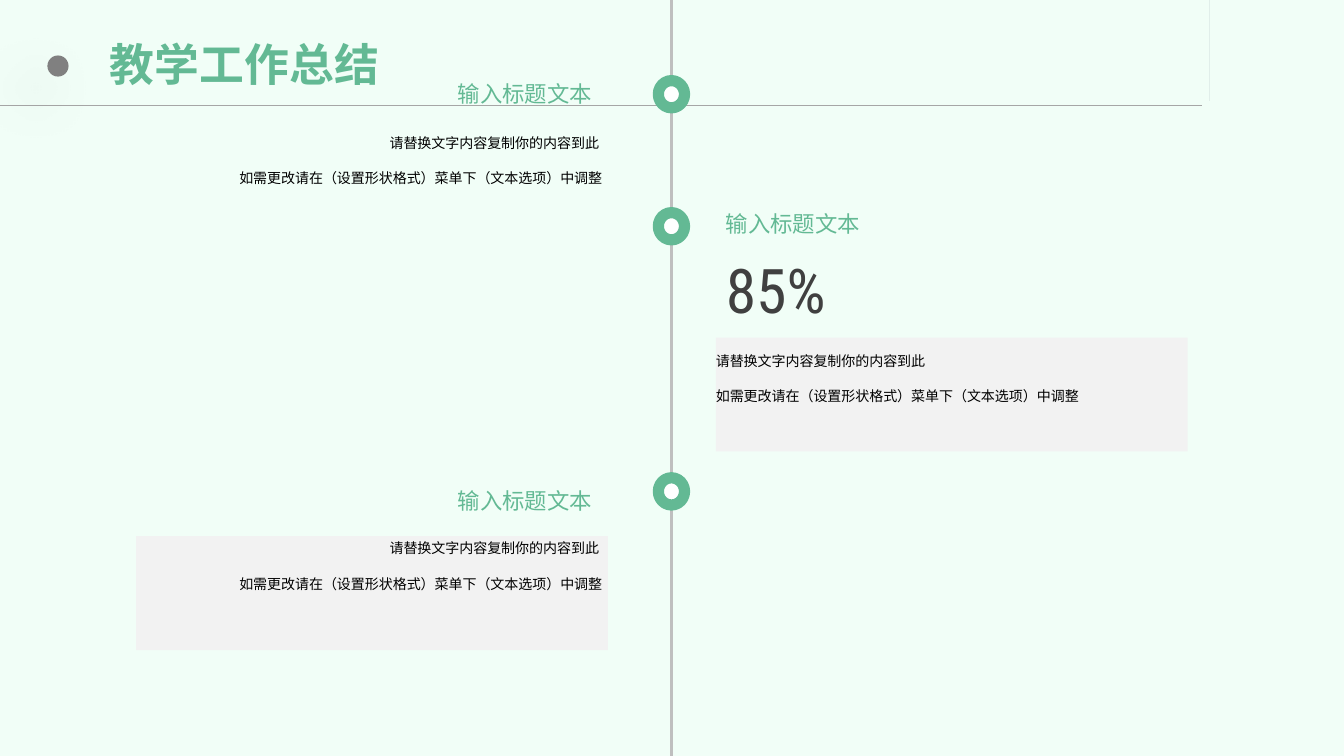
import pptx
import pptx.util
import pptx.dml.color
import pptx.enum.shapes
import pptx.enum.text
import pptx.oxml
import pptx.oxml.ns
from lxml import etree

Inches, Pt = pptx.util.Inches, pptx.util.Pt
ALIGN = pptx.enum.text.PP_ALIGN
SHAPE = pptx.enum.shapes.MSO_SHAPE
qn = pptx.oxml.ns.qn
GREEN = "63B994"
CJK = "Noto Sans CJK SC"


def color(hex_value):
    return pptx.dml.color.RGBColor.from_string(hex_value)


def add_text(text, left, top, width, height, size=10, font="Arial", fill="000000", bold=False,
             align=ALIGN.LEFT, anchor=pptx.enum.text.MSO_ANCHOR.TOP, wrap=True,
             inset=(0.1, 0.05), spacing=1.0, gap=0):
    frame = slide.shapes.add_textbox(Inches(left), Inches(top), Inches(width), Inches(height)).text_frame
    frame.word_wrap = wrap
    frame.vertical_anchor = anchor
    frame.margin_left = frame.margin_right = Inches(inset[0])
    frame.margin_top = frame.margin_bottom = Inches(inset[1])
    for index, line in enumerate(text.split("\n")):
        paragraph = frame.add_paragraph() if index else frame.paragraphs[0]
        paragraph.alignment = align
        paragraph.line_spacing = spacing
        paragraph.space_before = Pt(gap if index else 0)
        run = paragraph.add_run()
        run.text = line
        run.font.size = Pt(size)
        run.font.bold = bold
        run.font.color.rgb = color(fill)
        run.font.name = font
        etree.SubElement(run.font._element, qn("a:ea"), typeface=CJK)


presentation = pptx.Presentation()
presentation.slide_width, presentation.slide_height = Inches(13.33), Inches(7.5)
slide = presentation.slides.add_slide(presentation.slide_layouts[6])
slide.background.fill.solid()
slide.background.fill.fore_color.rgb = color("F1FEF7")

# Page title
add_text("教学工作总结", 1.02, 0.19, 10.91, 0.94, size=32, font=CJK, fill=GREEN, bold=True,
         anchor=pptx.enum.text.MSO_ANCHOR.MIDDLE, inset=(0.07, 0.04), spacing=0.9)

# Header rule and timeline axis
for x1, y1, x2, y2, line_color, weight in [
    (0, 1.05, 11.92, 1.05, "A6A6A6", 0.75),
    (6.66, 0, 6.66, 7.5, "BFBFBF", 2.25),
]:
    line = slide.shapes.add_connector(pptx.enum.shapes.MSO_CONNECTOR.STRAIGHT,
                                      Inches(x1), Inches(y1), Inches(x2), Inches(y2))
    line.line.color.rgb = color(line_color)
    line.line.width = Pt(weight)
    etree.SubElement(line._element.spPr, qn("a:effectLst"))

# Header dot with a soft shadow
dot = slide.shapes.add_shape(SHAPE.OVAL, Inches(0.47), Inches(0.55), Inches(0.21), Inches(0.21))
dot.fill.solid()
dot.fill.fore_color.rgb = color("808080")
dot.line.fill.background()
dot.shadow.inherit = False
effects = dot._element.spPr.find(qn("a:effectLst"))
shadow = etree.SubElement(effects, qn("a:outerShdw"), blurRad=str(Pt(40)), dist=str(Pt(22)),
                          dir=str(135 * 60000), algn="ctr", rotWithShape="0")
shadow_color = etree.SubElement(shadow, qn("a:srgbClr"), val="000000")
etree.SubElement(shadow_color, qn("a:alpha"), val="15000")

# Pen icon: outline, then the barrel and cap openings
pen_contours = [
    [(12.34, 0.49), (12.32, 0.47), (12.29, 0.46), (12.24, 0.54), (12.21, 0.61), (12.04, 0.95),
     (12.03, 0.98), (12.03, 1.01), (12.02, 1.04), (12.02, 1.05), (12.04, 1.01), (12.05, 1.02),
     (12.06, 1), (12.08, 0.97), (12.09, 0.98), (12.26, 0.65), (12.27, 0.64), (12.34, 0.51)],
    [(12.25, 0.65), (12.09, 0.97), (12.05, 0.95), (12.16, 0.74), (12.22, 0.62), (12.25, 0.64)],
    [(12.26, 0.63), (12.22, 0.61), (12.29, 0.47), (12.33, 0.49)],
]
builder = slide.shapes.build_freeform(*pen_contours[0][0], scale=Inches(1))
for index, contour in enumerate(pen_contours):
    if index:
        builder.move_to(*contour[0])
    builder.add_line_segments(contour[1:], close=True)
pen = builder.convert_to_shape()
pen.fill.solid()
pen.fill.fore_color.rgb = color("778495")
pen.line.fill.background()
pen.shadow.inherit = False

# Timeline entries: ring top, heading left and top, panel position, body left and top, alignment
body = "请替换文字内容复制你的内容到此 \n如需更改请在（设置形状格式）菜单下（文本选项）中调整"
entries = [
    (4.74, (4.42, 4.78), (1.35, 5.32), (1.9, 5.32), ALIGN.RIGHT),
    (0.8, (4.42, 0.75), None, (1.9, 1.3), ALIGN.RIGHT),
    (2.11, (7.1, 2.04), (7.1, 3.35), (7.1, 3.46), ALIGN.LEFT),
]
for ring_top, heading_at, panel_at, body_at, align in entries:
    ring = slide.shapes.add_shape(SHAPE.OVAL, Inches(6.53), Inches(ring_top), Inches(0.26), Inches(0.27))
    ring.fill.solid()
    ring.fill.fore_color.rgb = color("FFFFFF")
    ring.line.color.rgb = color(GREEN)
    ring.line.width = Pt(8)
    ring.shadow.inherit = False
    if panel_at:
        panel = slide.shapes.add_shape(SHAPE.RECTANGLE, Inches(panel_at[0]), Inches(panel_at[1]),
                                       Inches(4.68), Inches(1.13))
        panel.fill.solid()
        panel.fill.fore_color.rgb = color("F2F2F2")
        panel.line.fill.background()
        panel.shadow.inherit = False
    add_text("输入标题文本", *heading_at, 1.55, 0.37, size=16, fill=GREEN, align=align, wrap=False)
    add_text(body, *body_at, 4.07, 1.11, align=align, inset=(0, 0), spacing=1.2, gap=11)

# Key figure
add_text("85%", 7.1, 2.45, 1.29, 0.84, size=44, font="Roboto Condensed", fill="404040", wrap=False)

presentation.save("out.pptx")
